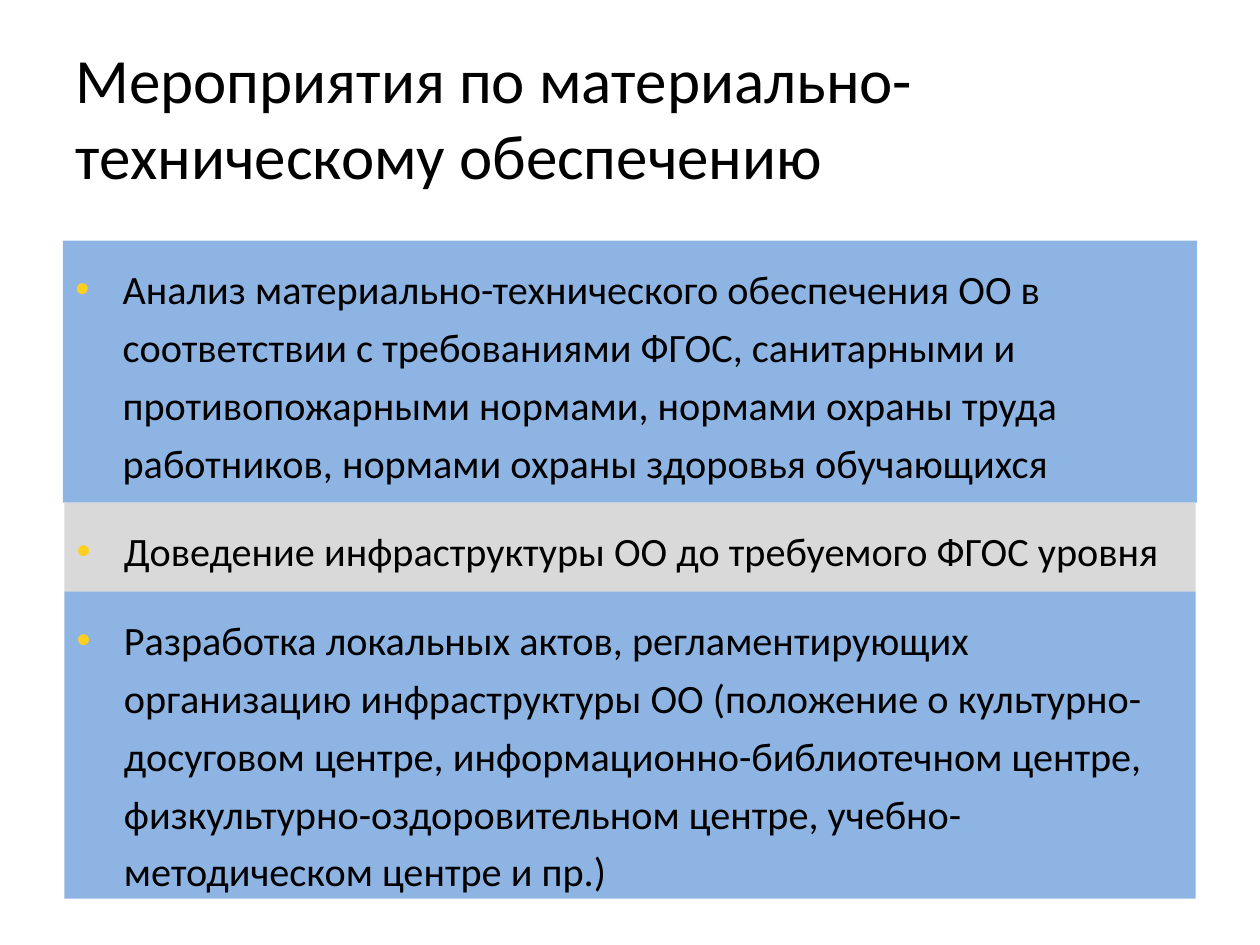
from dataclasses import dataclass

from lxml.etree import SubElement
from pptx import Presentation
from pptx.dml.color import RGBColor
from pptx.enum.shapes import MSO_SHAPE as Preset
from pptx.enum.text import MSO_ANCHOR as Anchor, MSO_AUTO_SIZE as AutoSize, PP_ALIGN as Align
from pptx.oxml.ns import qn
from pptx.util import Pt

FONT = "Calibri"
COLORS = {"text": "000000", "blue": "8EB4E3", "gray": "D9D9D9", "bullet": "FFCF20"}
INDENT = 27


@dataclass
class Band:
    left: float
    top: float
    width: float
    height: float
    fill: str
    text: str


BANDS = [
    Band(36, 137.5, 648, 149.75, "blue",
         "Анализ материально-технического обеспечения ОО в соответствии с требованиями ФГОС, "
         "санитарными и противопожарными нормами, нормами охраны труда работников, "
         "нормами охраны здоровья обучающихся"),
    Band(36.75, 287.25, 646.5, 51, "gray",
         "Доведение инфраструктуры ОО до требуемого ФГОС уровня"),
    Band(36.75, 338, 646.5, 175.5, "blue",
         "Разработка локальных актов, регламентирующих организацию инфраструктуры ОО "
         "(положение о культурно-досуговом центре, информационно-библиотечном центре, "
         "физкультурно-оздоровительном центре, учебно-методическом центре и пр.)"),
]


def color(name: str) -> RGBColor:
    return RGBColor.from_string(COLORS[name])


def format_paragraph(paragraph, size: float) -> None:
    paragraph.alignment = Align.LEFT
    paragraph.font.name = FONT
    paragraph.font.size = Pt(size)
    paragraph.font.color.rgb = color("text")


def add_bullet(paragraph) -> None:
    properties = paragraph._p.get_or_add_pPr()
    properties.set("marL", str(Pt(INDENT)))
    properties.set("indent", str(-Pt(INDENT)))
    bullet_color = SubElement(properties, qn("a:buClr"))
    SubElement(bullet_color, qn("a:srgbClr"), val=COLORS["bullet"])
    SubElement(properties, qn("a:buFont"), typeface="Arial")
    SubElement(properties, qn("a:buChar"), char="•")


def add_title(slide, text: str) -> None:
    title = slide.shapes.title
    title.left, title.top, title.width, title.height = Pt(36), Pt(21.6), Pt(648), Pt(90)
    frame = title.text_frame
    frame.text = text
    frame.word_wrap = True
    frame.auto_size = AutoSize.NONE
    frame.vertical_anchor = Anchor.MIDDLE
    format_paragraph(frame.paragraphs[0], 36)


def add_band(slide, band: Band) -> None:
    shape = slide.shapes.add_shape(
        Preset.RECTANGLE, Pt(band.left), Pt(band.top), Pt(band.width), Pt(band.height))
    shape.shadow.inherit = False
    shape.fill.solid()
    shape.fill.fore_color.rgb = color(band.fill)
    shape.line.fill.background()
    frame = shape.text_frame
    frame.word_wrap = True
    frame.vertical_anchor = Anchor.TOP
    frame.margin_top = Pt(8)
    frame.text = band.text
    paragraph = frame.paragraphs[0]
    add_bullet(paragraph)
    paragraph.line_spacing = 1.2
    paragraph.space_after = Pt(6)
    format_paragraph(paragraph, 23)


def main() -> None:
    presentation = Presentation()
    presentation.slide_width, presentation.slide_height = Pt(720), Pt(540)
    slide = presentation.slides.add_slide(presentation.slide_layouts[5])

    # Heading
    add_title(slide, "Мероприятия по материально-техническому обеспечению")

    # Stacked bands, one bulleted measure in each
    for band in BANDS:
        add_band(slide, band)

    presentation.save("out.pptx")


if __name__ == "__main__":
    main()
